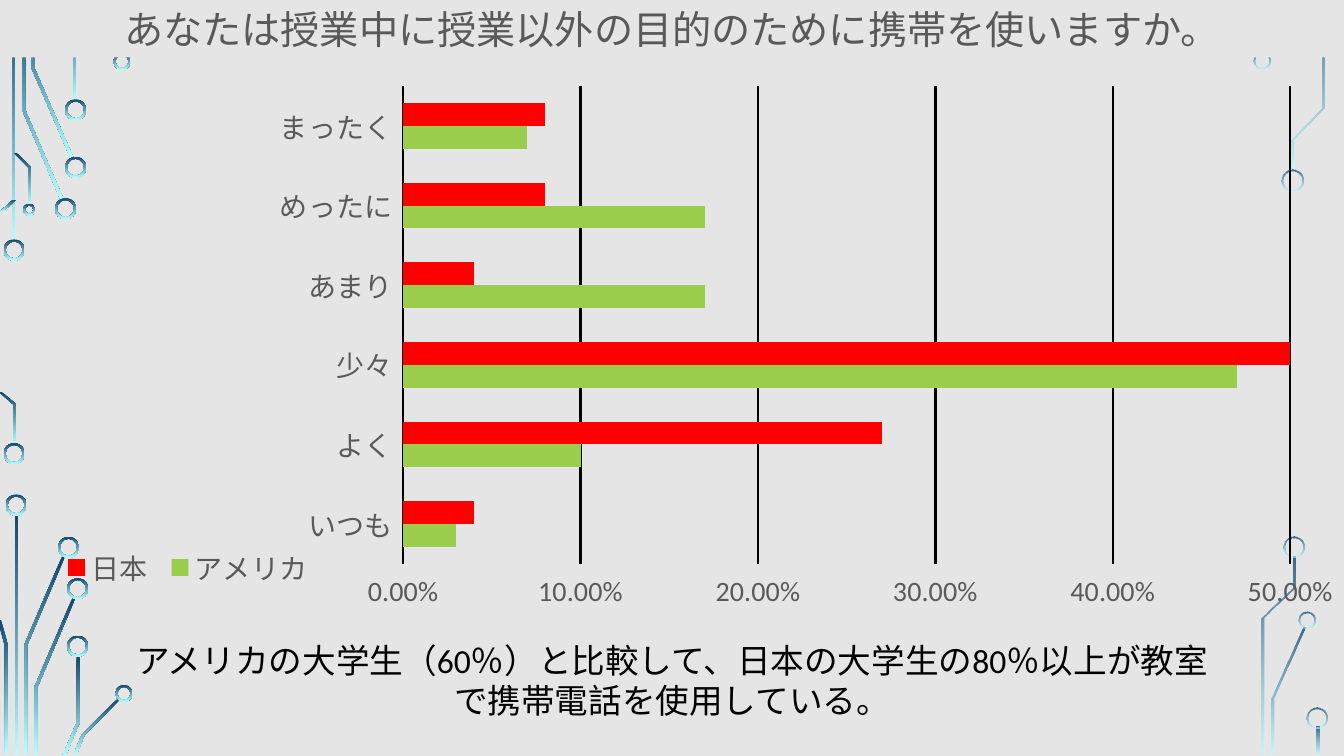
from lxml import etree
from pptx import Presentation
from pptx import util as u
from pptx.chart.data import CategoryChartData
from pptx.dml.color import RGBColor
from pptx.enum import chart as charts, shapes, text
from pptx.oxml.ns import qn

FONT = "Calibri"
BACKGROUND, GREY, BLACK = "E5E5E5", "595959", "000000"
TRACK_WIDTH = 0.03

LEFT_TRACKS = [
    [(0.12, 0.01), (0.12, 2.4)],
    [(0.22, 0.01), (0.22, 1.09), (0.6, 1.98)],
    [(0.31, 0.01), (0.31, 0.67), (0.7, 1.57)],
    [(0.6, 0.01), (0.73, 0.33), (0.73, 1)],
    [(0.7, 0), (0.78, 0.2), (1.14, 0.57)],
    [(0, 2.1), (0.13, 1.98)],
    [(-0.01, 3.89), (0.13, 4.01), (0.13, 4.41)],
    [(0.14, 1.52), (0.28, 1.66), (0.28, 2.03)],
    [(0.15, 5.1), (0.15, 7.49)],
    [(0.62, 5.51), (0.24, 6.4), (0.24, 7.48)],
    [(-0.02, 6.15), (0.05, 6.41), (0.05, 7.48)],
    [(0.72, 5.93), (0.34, 6.82), (0.34, 7.49)],
    [(0.76, 6.5), (0.76, 7.17), (0.62, 7.5)],
    [(1.17, 6.93), (0.81, 7.29), (0.73, 7.49)],
]
LEFT_RINGS = [
    (0.14, 2.48, 0.21), (0.14, 4.5, 0.21), (0.65, 2.07, 0.21),
    (0.75, 1.66, 0.21), (0.75, 1.09, 0.21), (1.21, 0.61, 0.17),
    (0.29, 2.08, 0.12), (0.16, 5.01, 0.21), (0.68, 5.43, 0.21),
    (0.77, 5.84, 0.21), (0.77, 6.41, 0.21), (1.23, 6.88, 0.17),
]
RIGHT_TRACKS = [
    [(0.59, 0), (0.51, 0.2), (0.16, 0.56)],
    [(0.71, 0.01), (0.71, 1.07), (0.41, 1.38), (0.41, 1.69)],
    [(0.42, 5.52), (0.42, 5.83), (0.11, 6.13), (0.11, 7.49)],
    [(0.52, 6.23), (0.21, 6.93), (0.21, 7.49)],
    [(0.66, 7.21), (0.66, 7.49)],
]
RIGHT_RINGS = [
    (0.12, 0.6, 0.17), (0.42, 1.79, 0.21), (0.43, 5.43, 0.21),
    (0.56, 6.15, 0.17), (0.66, 7.12, 0.21),
]
ANSWERS = ["いつも", "よく", "少々", "あまり", "めったに", "まったく"]
COUNTRIES = [
    ("アメリカ", "9ACD4C", [0.03, 0.1, 0.47, 0.17, 0.17, 0.07]),
    ("日本", "FF0000", [0.04, 0.27, 0.5, 0.04, 0.08, 0.08]),
]


def color(value):
    return RGBColor.from_string(value)


def style_font(font, size, value):
    font.name = FONT
    font.size = u.Pt(size)
    font.color.rgb = color(value)


def paint_circuit(shape, opacities):
    shape.shadow.inherit = False
    shape.line.fill.background()
    shape.fill.gradient()
    shape.fill.gradient_angle = 270
    for stop, value, position in zip(shape.fill.gradient_stops, ("134770", "B4FFFF"), (0, 1)):
        stop.color.rgb = color(value)
        stop.position = position
    for node, opacity in zip(shape.fill._xPr.iter(qn("a:srgbClr")), opacities):
        if opacity < 100:
            etree.SubElement(node, qn("a:alpha")).set("val", str(opacity * 1000))


def add_circuit(page, left, top, tracks, rings, opacities=(100, 100)):
    for track in tracks:
        outline = track + [(x + TRACK_WIDTH, y) for x, y in reversed(track)]
        points = [(u.Inches(left + x), u.Inches(top + y)) for x, y in outline]
        builder = page.shapes.build_freeform(*points[0])
        builder.add_line_segments(points[1:], close=True)
        paint_circuit(builder.convert_to_shape(), opacities)
    for x, y, size in rings:
        ring = page.shapes.add_shape(
            shapes.MSO_SHAPE.DONUT, u.Inches(left + x - size / 2),
            u.Inches(top + y - size / 2), u.Inches(size), u.Inches(size))
        ring.adjustments[0] = 0.02 / size
        paint_circuit(ring, opacities)


def set_layout(parent, index, x, y, w, h, inner=False):
    for old in parent.findall(qn("c:layout")):
        parent.remove(old)
    layout = etree.Element(qn("c:layout"))
    manual = etree.SubElement(layout, qn("c:manualLayout"))
    settings = [("layoutTarget", "inner")] if inner else []
    settings += [("xMode", "edge"), ("yMode", "edge"), ("x", x), ("y", y), ("w", w), ("h", h)]
    for name, value in settings:
        etree.SubElement(manual, qn("c:" + name)).set("val", str(value))
    parent.insert(index, layout)


def add_usage_chart(page, left, top, width, height):
    data = CategoryChartData(number_format="0.00%")
    data.categories = ANSWERS
    for name, _, values in COUNTRIES:
        data.add_series(name, values)
    chart = page.shapes.add_chart(
        charts.XL_CHART_TYPE.BAR_CLUSTERED, u.Inches(left), u.Inches(top),
        u.Inches(width), u.Inches(height), data).chart
    style_font(chart.font, 10, BLACK)
    chart.has_title = False

    plot = chart.plots[0]
    plot.gap_width = 150
    plot.vary_by_categories = False
    for series, (_, value, _) in zip(plot.series, COUNTRIES):
        series.format.fill.solid()
        series.format.fill.fore_color.rgb = color(value)

    for axis in (chart.category_axis, chart.value_axis):
        style_font(axis.tick_labels.font, 20, GREY)
        axis.format.line.fill.background()
    axis = chart.value_axis
    axis.minimum_scale, axis.maximum_scale, axis.major_unit = 0, 0.5, 0.1
    axis.tick_labels.number_format = "0.00%"
    axis.tick_labels.number_format_is_linked = False
    axis.has_major_gridlines = True
    axis.major_gridlines.format.line.color.rgb = color(BLACK)
    axis.major_gridlines.format.line.width = u.Pt(1.75)

    chart.has_legend = True
    legend = chart.legend
    legend.position = charts.XL_LEGEND_POSITION.BOTTOM
    legend.include_in_layout = False
    style_font(legend.font, 20, GREY)
    set_layout(legend._element, 1, 0.04, 0.81, 0.2, 0.07)
    set_layout(chart._chartSpace.chart.plotArea, 0, 0.3, 0.16, 0.66, 0.68, inner=True)


def write_centred(shape, words, size, value):
    frame = shape.text_frame
    frame.word_wrap = True
    frame.auto_size = text.MSO_AUTO_SIZE.SHAPE_TO_FIT_TEXT
    para = frame.paragraphs[0]
    para.text = words
    para.alignment = text.PP_ALIGN.CENTER
    style_font(para.font, size, value)


def add_question(page, left, top, width, height):
    band = page.shapes.add_shape(
        shapes.MSO_SHAPE.RECTANGLE, u.Inches(left), u.Inches(top),
        u.Inches(width), u.Inches(height))
    band.shadow.inherit = False
    band.fill.solid()
    band.fill.fore_color.rgb = color(BACKGROUND)
    band.line.fill.background()
    write_centred(band, "あなたは授業中に授業以外の目的のために携帯を使いますか。", 28, GREY)


def add_finding(page, left, top, width, height):
    box = page.shapes.add_textbox(
        u.Inches(left), u.Inches(top), u.Inches(width), u.Inches(height))
    words = "アメリカの大学生（60％）と比較して、日本の大学生の80％以上が教室で携帯電話を使用している。"
    write_centred(box, words, 24, BLACK)


def main():
    deck = Presentation()
    deck.slide_width, deck.slide_height = u.Inches(13.33), u.Inches(7.5)
    page = deck.slides.add_slide(deck.slide_layouts[6])
    page.background.fill.solid()
    page.background.fill.fore_color.rgb = color(BACKGROUND)
    add_circuit(page, 0, 0, LEFT_TRACKS, LEFT_RINGS)
    add_circuit(page, 12.4, 0, RIGHT_TRACKS, RIGHT_RINGS, (80, 60))
    add_usage_chart(page, 0, -0.26, 13.33, 6.97)
    add_question(page, 0, 0, 13.33, 0.57)
    add_finding(page, 1.24, 6.3, 10.85, 0.91)
    deck.save("out.pptx")


if __name__ == "__main__":
    main()
